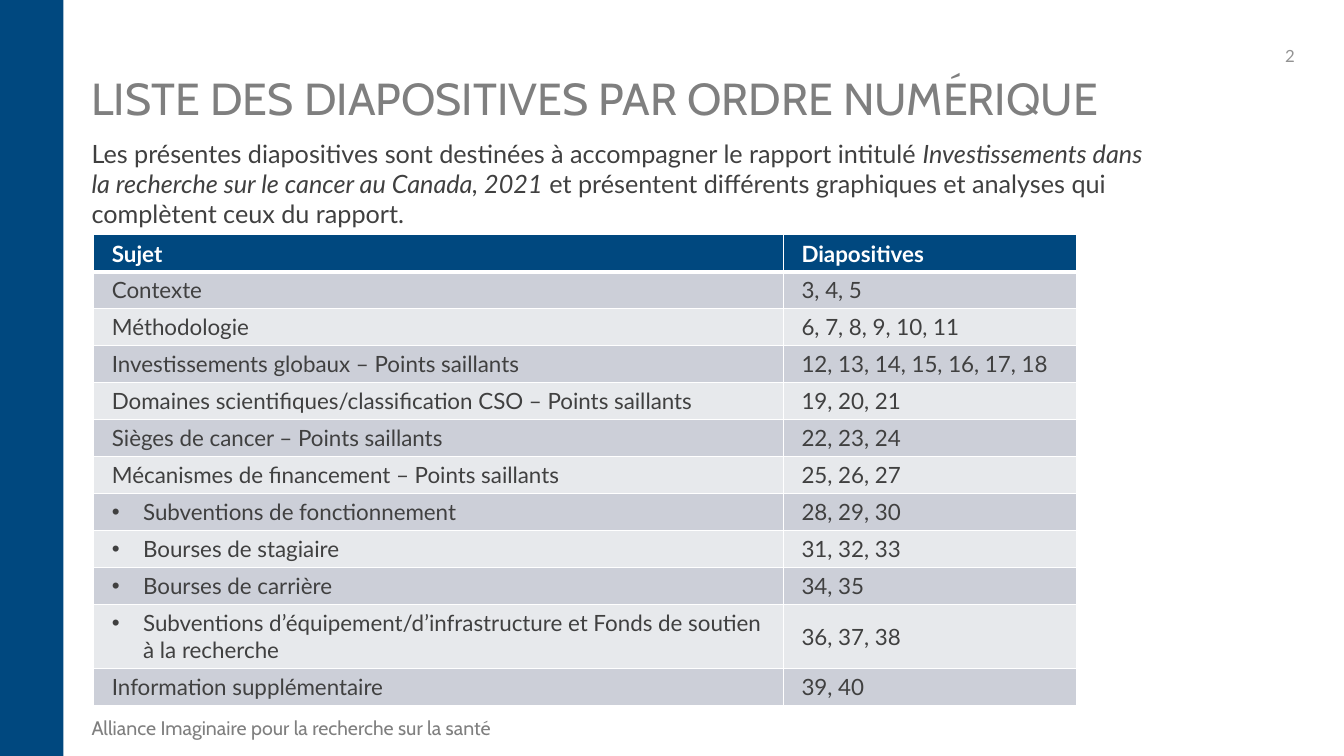
from lxml import etree
from pptx import Presentation
from pptx.dml.color import RGBColor
from pptx.enum.shapes import MSO_SHAPE
from pptx.enum.text import MSO_ANCHOR, PP_ALIGN
from pptx.oxml.ns import qn
from pptx.util import Inches, Pt

NAVY = RGBColor(0x00, 0x48, 0x7F)
WHITE = RGBColor(0xFF, 0xFF, 0xFF)
DARK = RGBColor(0x40, 0x40, 0x40)
GREY = RGBColor(0x7F, 0x7F, 0x7F)
PAGE_GREY = RGBColor(0x93, 0x93, 0x93)
BAND_DARK = RGBColor(0xCC, 0xCF, 0xD8)
BAND_LIGHT = RGBColor(0xE7, 0xE9, 0xEC)

TITLE_FONT, BODY_FONT = "Cabin", "Lato"
COLUMN_WIDTHS = (6.84, 2.91)
ROW_HEIGHT, TWO_LINE_HEIGHT = 0.36, 0.63

# Subject, slide numbers, whether the subject is a bulleted sub-item
TOPICS = [
    ("Contexte", "3, 4, 5", False),
    ("Méthodologie", "6, 7, 8, 9, 10, 11", False),
    ("Investissements globaux – Points saillants", "12, 13, 14, 15, 16, 17, 18", False),
    ("Domaines scientifiques/classification CSO – Points saillants", "19, 20, 21", False),
    ("Sièges de cancer – Points saillants", "22, 23, 24", False),
    ("Mécanismes de financement – Points saillants", "25, 26, 27", False),
    ("Subventions de fonctionnement", "28, 29, 30", True),
    ("Bourses de stagiaire", "31, 32, 33", True),
    ("Bourses de carrière", "34, 35", True),
    ("Subventions d’équipement/d’infrastructure et Fonds de soutien à la recherche",
     "36, 37, 38", True),
    ("Information supplémentaire", "39, 40", False),
]
INTRO = [
    ("Les présentes diapositives sont destinées à accompagner le rapport intitulé ", False),
    ("Investissements dans la recherche sur le cancer au Canada, 2021", True),
    (" et présentent différents graphiques et analyses qui complètent ceux du rapport.", False),
]


def style_font(font, name, size, color, bold=False, italic=False):
    font.name, font.size, font.bold, font.italic = name, Pt(size), bold, italic
    font.color.rgb = color


def add_text(slide, box, pieces, font_name, size, color, anchor=MSO_ANCHOR.TOP, wrap=True):
    """Add a one-paragraph text box from (text, italic) pieces; return the paragraph."""
    frame = slide.shapes.add_textbox(*map(Inches, box)).text_frame
    frame.word_wrap = wrap
    frame.vertical_anchor = anchor
    paragraph = frame.paragraphs[0]
    for text, italic in pieces:
        run = paragraph.add_run()
        run.text = text
        style_font(run.font, font_name, size, color, italic=italic)
    return paragraph


def add_side_band(slide, box):
    band = slide.shapes.add_shape(MSO_SHAPE.RECTANGLE, *map(Inches, box))
    band.shadow.inherit = False
    band.fill.solid()
    band.fill.fore_color.rgb = NAVY
    band.line.fill.background()


def add_header(slide, title_box, number_box, intro_box):
    title = add_text(slide, title_box, [("LISTE DES DIAPOSITIVES PAR ORDRE NUMÉRIQUE", False)],
                     TITLE_FONT, 32, GREY, MSO_ANCHOR.MIDDLE)
    title.line_spacing = 0.9
    number = add_text(slide, number_box, [("2", False)], BODY_FONT, 12, PAGE_GREY,
                      MSO_ANCHOR.MIDDLE)
    number.alignment = PP_ALIGN.RIGHT
    add_text(slide, intro_box, INTRO, BODY_FONT, 18, DARK)


def set_borders(cell, top, bottom):
    """Draw white borders, 1 pt at the sides; they precede the fill in tcPr."""
    properties = cell._tc.get_or_add_tcPr()
    for position, (side, width) in enumerate(
            [("lnL", 1), ("lnR", 1), ("lnT", top), ("lnB", bottom)]):
        line = etree.Element(qn(f"a:{side}"), w=str(Pt(width)))
        fill = etree.SubElement(line, qn("a:solidFill"))
        etree.SubElement(fill, qn("a:srgbClr"), val=str(WHITE))
        properties.insert(position, line)


def add_bullet(paragraph):
    properties = paragraph._p.get_or_add_pPr()
    indent = Inches(0.31)
    properties.set("marL", str(indent))
    properties.set("indent", str(-indent))
    etree.SubElement(properties, qn("a:buFont"), typeface="Arial")
    etree.SubElement(properties, qn("a:buChar"), char="•")


def fill_cell(cell, text, row):
    is_header = row == 0
    cell.margin_left = cell.margin_right = Inches(0.18)
    cell.margin_top = cell.margin_bottom = Inches(0.05)
    cell.vertical_anchor = MSO_ANCHOR.BOTTOM if is_header else MSO_ANCHOR.MIDDLE
    cell.fill.solid()
    cell.fill.fore_color.rgb = NAVY if is_header else BAND_DARK if row % 2 else BAND_LIGHT
    set_borders(cell, top=3 if row == 1 else 1, bottom=3 if is_header else 1)
    cell.text_frame.text = text
    style_font(cell.text_frame.paragraphs[0].runs[0].font, BODY_FONT, 16,
               WHITE if is_header else DARK, bold=is_header)


def add_topic_table(slide, box):
    rows = [("Sujet", "Diapositives", False)] + TOPICS
    table = slide.shapes.add_table(len(rows), len(COLUMN_WIDTHS), *map(Inches, box)).table
    for column, width in zip(table.columns, COLUMN_WIDTHS):
        column.width = Inches(width)
    for row, (subject, numbers, is_sub_item) in enumerate(rows):
        wraps = len(subject) > 65
        table.rows[row].height = Inches(TWO_LINE_HEIGHT if wraps else ROW_HEIGHT)
        for column, text in enumerate((subject, numbers)):
            fill_cell(table.cell(row, column), text, row)
        if is_sub_item:
            add_bullet(table.cell(row, 0).text_frame.paragraphs[0])


def add_footer(slide, box):
    add_text(slide, box, [("Alliance Imaginaire pour la recherche sur la santé", False)],
             TITLE_FONT, 14, GREY, wrap=False)


def main():
    deck = Presentation()
    deck.slide_width, deck.slide_height = Inches(13.33), Inches(7.5)
    slide = deck.slides.add_slide(deck.slide_layouts[6])
    add_footer(slide, (0.81, 7.05, 4.66, 0.34))
    add_side_band(slide, (0, 0, 0.63, 7.5))
    add_topic_table(slide, (0.93, 2.33, sum(COLUMN_WIDTHS), 4.67))
    add_header(slide, title_box=(0.81, 0.41, 12.1, 1.18), number_box=(9.94, 0.35, 3, 0.4),
               intro_box=(0.81, 1.32, 10.76, 1.01))
    deck.save("out.pptx")


if __name__ == "__main__":
    main()
